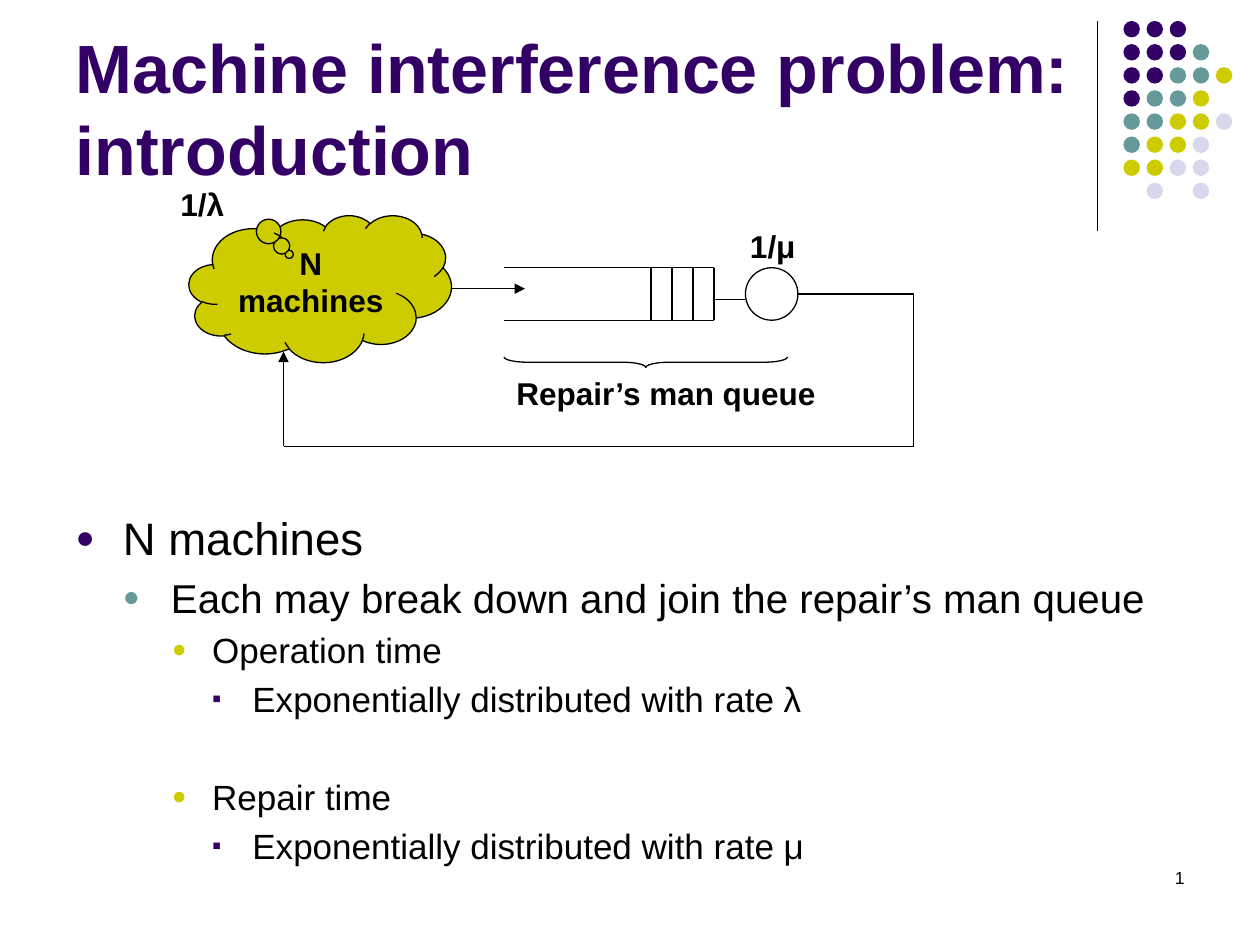
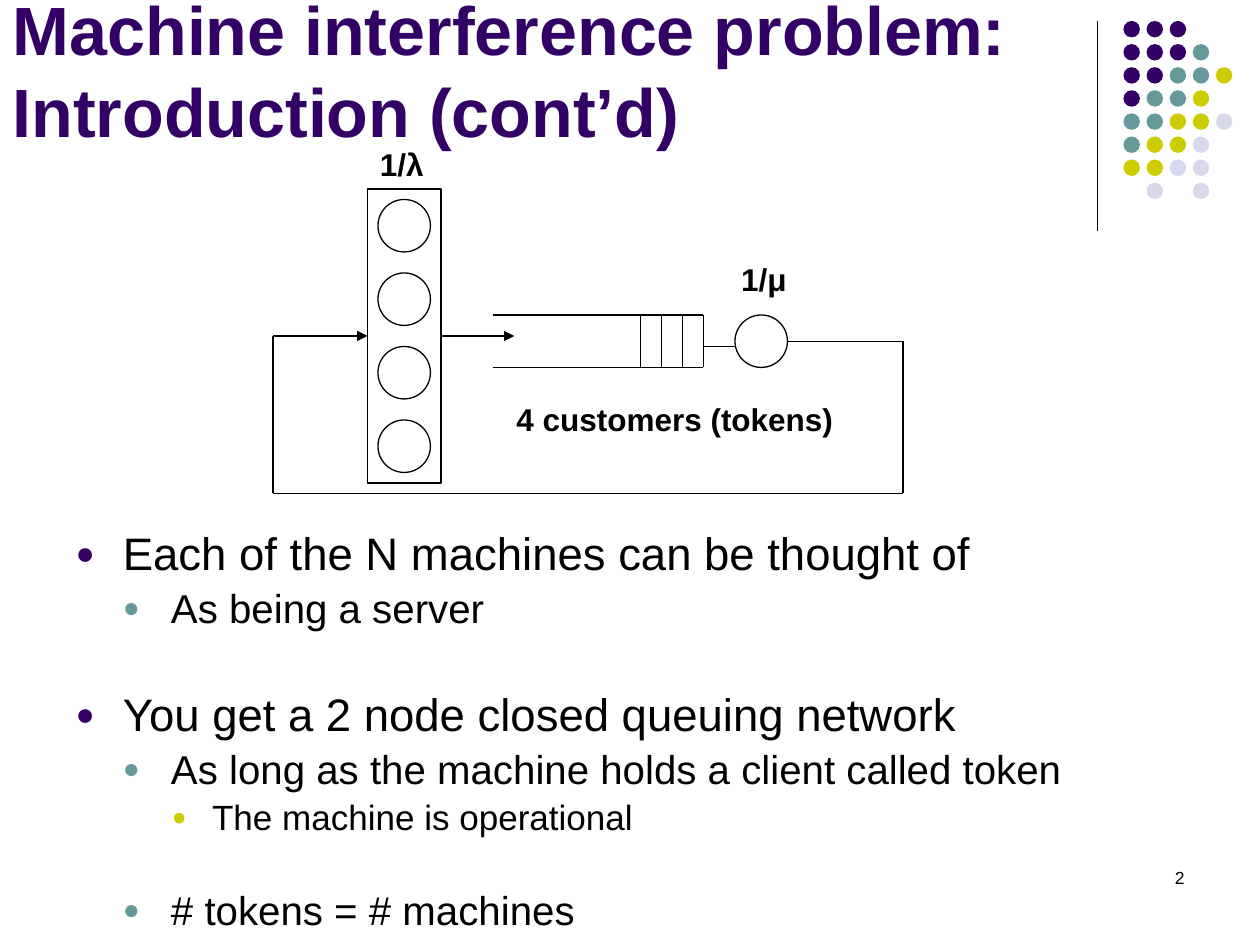
from dataclasses import dataclass
from itertools import pairwise

from lxml.etree import SubElement
from pptx import Presentation
from pptx.dml.color import RGBColor
from pptx.enum.shapes import MSO_CONNECTOR, MSO_SHAPE as Preset
from pptx.enum.text import MSO_ANCHOR as Anchor, MSO_AUTO_SIZE as AutoSize, PP_ALIGN as Align
from pptx.oxml.ns import qn
from pptx.util import Pt


@dataclass(frozen=True)
class Theme:
    font: str = "Arial"
    purple: str = "330066"
    teal: str = "669999"
    olive: str = "CCCC00"
    lilac: str = "D8D8EC"
    black: str = "000000"
    title_size: int = 39
    label_size: int = 18
    number_size: int = 10
    line_width: float = 0.75
    line_height: float = 1.2
    paragraph_gap: float = 0.2


@dataclass(frozen=True)
class Level:
    """Look of one list level, lengths in points."""
    size: int
    margin: float
    hanging: float
    bullet: str
    bullet_color: str
    bullet_percent: int


THEME = Theme()
LEVELS = [
    Level(26, 27, 27, "●", THEME.purple, 70),
    Level(23, 54.5, 27.5, "●", THEME.teal, 70),
    Level(20, 78, 23, "●", THEME.olive, 70),
    Level(20, 101, 23, "▪", THEME.purple, 75),
]
DOT_ROWS = ["PPP", "PPPT", "PPTTY", "PTTY", "TTYYL", "TYYL", "YYLL", " L L"]
DOT_COLORS = {"P": THEME.purple, "T": THEME.teal, "Y": THEME.olive, "L": THEME.lilac}


def style_font(font, size, color=THEME.black, bold=False):
    font.name = THEME.font
    font.size = Pt(size)
    font.bold = bold
    font.color.rgb = RGBColor.from_string(color)


def place(shape, left, top, width, height):
    shape.left, shape.top = Pt(left), Pt(top)
    shape.width, shape.height = Pt(width), Pt(height)


def add_preset(shapes, preset, left, top, width, height, fill=None, outline=True):
    shape = shapes.add_shape(preset, Pt(left), Pt(top), Pt(width), Pt(height))
    shape.shadow.inherit = False
    if fill:
        shape.fill.solid()
        shape.fill.fore_color.rgb = RGBColor.from_string(fill)
    else:
        shape.fill.background()
    if outline:
        shape.line.color.rgb = RGBColor.from_string(THEME.black)
        shape.line.width = Pt(THEME.line_width)
    else:
        shape.line.fill.background()
    return shape


def add_path(slide, *points, arrow=False):
    """Join the points with straight connectors; the arrow sits on the last one."""
    connectors = []
    for start, end in pairwise(points):
        connector = slide.shapes.add_connector(
            MSO_CONNECTOR.STRAIGHT, *(Pt(value) for value in start + end))
        connector.line.color.rgb = RGBColor.from_string(THEME.black)
        connector.line.width = Pt(THEME.line_width)
        SubElement(connector._element.spPr, qn("a:effectLst"))
        connectors.append(connector)
    if arrow:
        line = connectors[-1].line._get_or_add_ln()
        SubElement(line, qn("a:tailEnd"), type="triangle")
    return connectors


def add_text(slide, text, left, top, width, height, size, bold=False, alignment=Align.LEFT):
    box = slide.shapes.add_textbox(Pt(left), Pt(top), Pt(width), Pt(height))
    box.text_frame.word_wrap = True
    paragraph = box.text_frame.paragraphs[0]
    paragraph.text = text
    paragraph.alignment = alignment
    style_font(paragraph.font, size, bold=bold)


def add_label(slide, text, left, top, width=50):
    add_text(slide, text, left, top, width, 29, THEME.label_size, bold=True)


def add_slide_number(slide, number):
    add_text(slide, str(number), 516, 492, 168, 36, THEME.number_size, alignment=Align.RIGHT)


def add_dots(slide):
    pitch, diameter = 13.2, 9.4
    group = slide.shapes.add_group_shape()
    for row, codes in enumerate(DOT_ROWS):
        for column, code in enumerate(codes):
            if code in DOT_COLORS:
                add_preset(group.shapes, Preset.OVAL, 642 + column * pitch, 12 + row * pitch,
                           diameter, diameter, DOT_COLORS[code], outline=False)


def set_title(slide, text, left, top):
    title = slide.shapes.title
    place(title, left, top, 594, 102)
    frame = title.text_frame
    frame.text = text
    frame.auto_size = AutoSize.NONE
    frame.vertical_anchor = Anchor.BOTTOM
    paragraph = frame.paragraphs[0]
    paragraph.alignment = Align.LEFT
    paragraph.line_spacing = 1.0
    style_font(paragraph.font, THEME.title_size, THEME.purple, bold=True)


def set_bullet(paragraph, level):
    properties = paragraph._p.get_or_add_pPr()
    properties.set("marL", str(Pt(level.margin)))
    properties.set("indent", str(-Pt(level.hanging)))
    color = SubElement(properties, qn("a:buClr"))
    SubElement(color, qn("a:srgbClr"), val=level.bullet_color)
    SubElement(properties, qn("a:buSzPct"), val=str(level.bullet_percent * 1000))
    SubElement(properties, qn("a:buFont"), typeface=THEME.font)
    SubElement(properties, qn("a:buChar"), char=level.bullet)


def set_list(slide, top, height, groups, line_spacing=1.0):
    """Fill the body with groups of (level, text), one line's height apart."""
    body = slide.placeholders[1]
    place(body, 36, top, 648, height)
    frame = body.text_frame
    frame.auto_size = AutoSize.NONE
    paragraph = None
    for group in groups:
        for position, (depth, text) in enumerate(group):
            level = LEVELS[depth]
            space = THEME.paragraph_gap * level.size
            if paragraph is None:
                paragraph = frame.paragraphs[0]
            else:
                if position == 0:
                    space += previous_size * (THEME.line_height * line_spacing
                                              + THEME.paragraph_gap)
                paragraph = frame.add_paragraph()
            paragraph.text = text
            paragraph.level = depth
            paragraph.line_spacing = line_spacing
            paragraph.space_before = Pt(space)
            set_bullet(paragraph, level)
            style_font(paragraph.font, level.size)
            previous_size = level.size


def add_queue(slide, left, top):
    """Open-ended queue with three waiting places and a round server."""
    height, right = 30, left + 120
    bottom = top + height
    add_path(slide, (left, top), (right, top), (right, bottom), (left, bottom))
    for step in (1, 2, 3):
        x = right - 12 * step
        add_path(slide, (x, top), (x, bottom))
    add_path(slide, (right, top + 18), (right + 18, top + 18))
    add_preset(slide.shapes, Preset.OVAL, right + 18, top, height, height)


def add_feedback(slide, left, top, *ending):
    """Path from the server of the queue at (left, top), below it and back."""
    far_right, bottom, far_left = left + 234, top + 102, left - 126
    return add_path(slide, (left + 168, top + 15), (far_right, top + 15), (far_right, bottom),
                    (far_left, bottom), *ending, arrow=True)


def add_machine_cloud(slide):
    cloud = add_preset(slide.shapes, Preset.CLOUD_CALLOUT, 108, 123, 150, 84, THEME.olive)
    cloud.adjustments[0], cloud.adjustments[1] = -0.118, -0.234
    frame = cloud.text_frame
    frame.text = "N\nmachines"
    frame.vertical_anchor = Anchor.TOP
    frame.margin_left = frame.margin_right = Pt(5)
    for paragraph in frame.paragraphs:
        paragraph.alignment = Align.CENTER
        style_font(paragraph.font, THEME.label_size, bold=True)


def add_queue_brace(slide):
    brace = add_preset(slide.shapes, Preset.RIGHT_BRACE, 366, 126, 6, 162)
    brace.adjustments[0], brace.adjustments[1] = 2.25, 0.5
    brace.rotation = 90


def add_machine_rack(slide):
    rack = add_preset(slide.shapes, Preset.RECTANGLE, 210, 108, 42, 168)
    for machine in range(4):
        add_preset(slide.shapes, Preset.OVAL, 216, 114 + 42 * machine, 30, 30)
    return rack


def start_slide(presentation, title, left, top):
    slide = presentation.slides.add_slide(presentation.slide_layouts[1])
    add_path(slide, (627, 12), (627, 132))
    add_dots(slide)
    add_slide_number(slide, len(presentation.slides))
    set_title(slide, title, left, top)
    return slide


def build_introduction(presentation):
    slide = start_slide(presentation, "Machine interference problem: introduction", 36, 9.5)
    set_list(slide, 288, 222, [
        [(0, "N machines"),
         (1, "Each may break down and join the repair’s man queue"),
         (2, "Operation time"),
         (3, "Exponentially distributed with rate λ")],
        [(2, "Repair time"),
         (3, "Exponentially distributed with rate μ")],
    ])
    left, top = 288, 153
    add_queue(slide, left, top)
    add_feedback(slide, left, top, (left - 126, 201))
    add_machine_cloud(slide)
    add_path(slide, (258, top + 12), (left + 12, top + 12), arrow=True)
    add_queue_brace(slide)
    add_label(slide, "Repair’s man queue", 288, 210, 200)
    add_label(slide, "1/μ", 421.5, 126)
    add_label(slide, "1/λ", 96, 102)


def build_network(presentation):
    slide = start_slide(presentation, "Machine interference problem: Introduction (cont’d)", 0, -12)
    set_list(slide, 300, 258, [
        [(0, "Each of the N machines can be thought of"),
         (1, "As being a server")],
        [(0, "You get a 2 node closed queuing network"),
         (1, "As long as the machine holds a client called token"),
         (2, "The machine is operational")],
        [(1, "# tokens = # machines")],
    ], line_spacing=0.9)
    left, top = 282, 180
    rack = add_machine_rack(slide)
    add_queue(slide, left, top)
    entry = top + 12
    departure = add_path(slide, (252, entry), (left + 12, entry), arrow=True)[0]
    departure.begin_connect(rack, 3)
    feedback = add_feedback(slide, left, top, (left - 126, entry), (210, entry))
    feedback[-1].end_connect(rack, 1)
    add_label(slide, "4 customers (tokens)", 288, 225, 210)
    add_label(slide, "1/λ", 210, 79.5)
    add_label(slide, "1/μ", 416.5, 145)


def main():
    presentation = Presentation()
    presentation.slide_width, presentation.slide_height = Pt(720), Pt(540)
    build_introduction(presentation)
    build_network(presentation)
    presentation.save("out.pptx")


if __name__ == "__main__":
    main()
